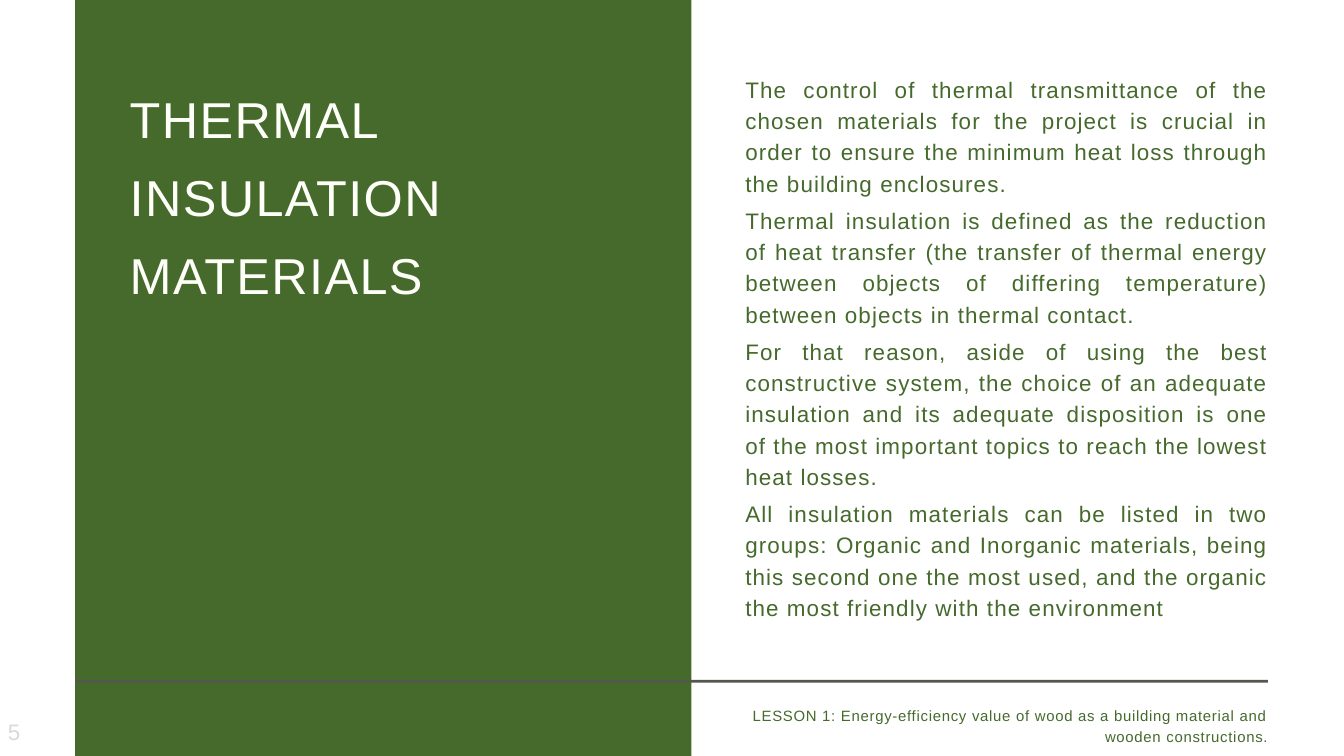
"""Build the thermal insulation materials slide."""
from lxml.etree import SubElement
from pptx import Presentation
from pptx.dml.color import RGBColor
from pptx.enum.shapes import MSO_SHAPE
from pptx.enum.text import MSO_ANCHOR, MSO_AUTO_SIZE, PP_ALIGN
from pptx.oxml.ns import qn
from pptx.util import Pt

COLORS = {"green": "456A2C", "rule": "52584D", "title": "FEFFF8", "number": "D9D9D9"}

TITLE = ["THERMAL INSULATION MATERIALS"]
BODY = [
    "The control of thermal transmittance of the chosen materials for the project is crucial in order to ensure the minimum heat loss through the building enclosures.",
    "Thermal insulation is defined as the reduction of heat transfer (the transfer of thermal energy between objects of differing temperature) between objects in thermal contact.",
    "For that reason, aside of using the best constructive system, the choice of an adequate insulation and its adequate disposition is one of the most important topics to reach the lowest heat losses.",
    "All insulation materials can be listed in two groups: Organic and Inorganic materials, being this second one the most used, and the organic the most friendly with the environment",
]
LESSON = ["LESSON 1: Energy-efficiency value of wood as a building material and wooden constructions."]
NUMBER = ["5"]

LEFT, RIGHT = 80.6, 1358.6
PANEL = (LEFT, -26.6, 660.2, 862.6)
RULE = (LEFT, 728.6, RIGHT - LEFT, 2.9)


def para(align, leading, after=0):
    return {"alignment": align, "line_spacing": leading,
            "space_before": Pt(0), "space_after": Pt(after)}


def font(size, color):
    return {"name": "Arial", "size": Pt(size), "bold": False, "color": color}


TEXTS = {
    "body": (BODY, (798.5, 76.3, RIGHT - 798.5, 740.2), 0, MSO_ANCHOR.TOP,
             para(PP_ALIGN.JUSTIFY, Pt(33.6), 6), font(24, "green"), 1.2),
    "title": (TITLE, (139, 75.6, 544.3, 337), 0, MSO_ANCHOR.TOP,
              para(PP_ALIGN.LEFT, Pt(83.7)), font(54, "title"), 1.5),
    "lesson": (LESSON, (760.3, 753.8, RIGHT - 760.3, 64.8), 0, MSO_ANCHOR.TOP,
               para(PP_ALIGN.RIGHT, Pt(22.4)), font(16, "green"), 0.8),
    "number": (NUMBER, (1.4, 769.7, 167.8, 28.8), 7.2, MSO_ANCHOR.MIDDLE,
               para(PP_ALIGN.LEFT, 1.0), font(24, "number"), 1.2),
}


def rgb(name):
    return RGBColor.from_string(COLORS[name])


def apply(obj, values):
    for key, value in values.items():
        setattr(obj, key, value)


def add_bar(s, box, color):
    sp = s.shapes.add_shape(MSO_SHAPE.RECTANGLE, *map(Pt, box))
    sp.shadow.inherit = False
    sp.fill.solid()
    sp.fill.fore_color.rgb = rgb(color)
    sp.line.fill.background()
    return sp


def write(sp, lines, box, inset, anchor, para_format, font_format, spacing):
    apply(sp, dict(zip(("left", "top", "width", "height"), map(Pt, box))))
    tf = sp.text_frame
    apply(tf, {"word_wrap": True, "auto_size": MSO_AUTO_SIZE.NONE, "vertical_anchor": anchor,
               "margin_left": Pt(inset), "margin_right": Pt(inset),
               "margin_top": Pt(inset / 2), "margin_bottom": Pt(inset / 2)})
    for i, line in enumerate(lines):
        p = tf.add_paragraph() if i else tf.paragraphs[0]
        apply(p, para_format)
        pPr = p._p.get_or_add_pPr()
        apply_indent = {"marL": "0", "indent": "0"}
        for key, value in apply_indent.items():
            pPr.set(key, value)
        SubElement(pPr, qn("a:buNone"))
        r = p.add_run()
        r.text = line
        apply(r.font, {k: v for k, v in font_format.items() if k != "color"})
        r.font.color.rgb = rgb(font_format["color"])
        r._r.get_or_add_rPr().set("spc", str(round(spacing * 100)))


def main():
    prs = Presentation()
    prs.slide_width, prs.slide_height = Pt(1440), Pt(810)
    s = prs.slides.add_slide(prs.slide_layouts[1])
    panel = add_bar(s, PANEL, "green")
    s.shapes._spTree.insert(2, panel._element)
    add_bar(s, RULE, "rule")
    holders = {"title": s.shapes.title, "body": s.placeholders[1]}
    for name, (lines, box, *style) in TEXTS.items():
        sp = holders.get(name) or s.shapes.add_textbox(*map(Pt, box))
        write(sp, lines, box, *style)
    prs.save("out.pptx")


if __name__ == "__main__":
    main()
